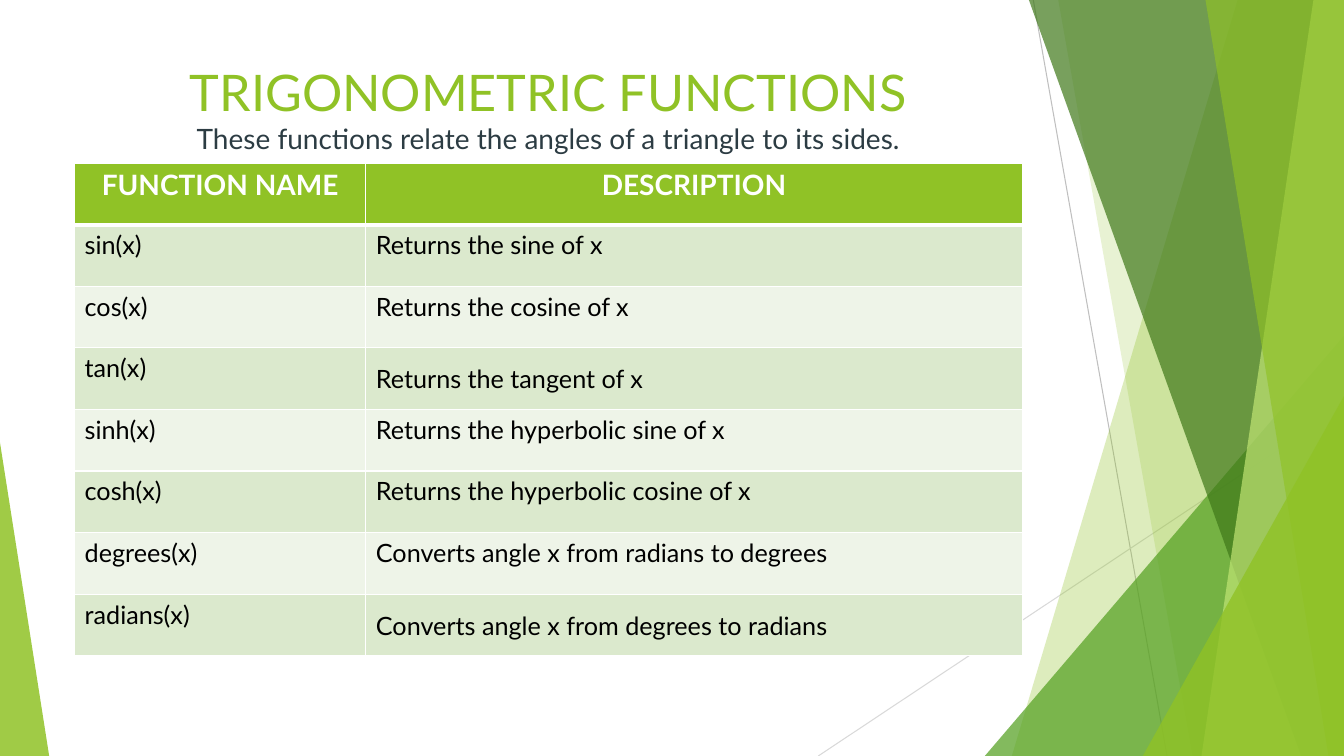
from dataclasses import dataclass

from lxml.etree import SubElement
from pptx import Presentation
from pptx.dml.color import RGBColor
from pptx.enum.shapes import MSO_CONNECTOR, MSO_SHAPE
from pptx.enum.text import MSO_ANCHOR, PP_ALIGN
from pptx.oxml.ns import qn
from pptx.util import Cm, Pt

WIDTH, HEIGHT = 33.87, 19.05


@dataclass(frozen=True)
class Theme:
    font: str = "Lato"
    lime: str = "90C226"
    pale_lime: str = "C0E474"
    green: str = "54A021"
    forest: str = "3F7819"
    slate: str = "2C3C43"
    white: str = "FFFFFF"
    black: str = "000000"
    bands: tuple = ("DBE9CD", "EEF4E8")
    grey: str = "BFBFBF"
    light_grey: str = "D9D9D9"
    title: int = 36
    subtitle: int = 20
    header: int = 20
    body: int = 18


class SlideBuilder:
    def __init__(self, slide, theme):
        self.s, self.theme = slide, theme

    def style_font(self, font, size, color, bold=False):
        font.name, font.size, font.bold = self.theme.font, Pt(size), bold
        font.color.rgb = RGBColor.from_string(color)

    def line(self, x1, y1, x2, y2, color):
        cn = self.s.shapes.add_connector(
            MSO_CONNECTOR.STRAIGHT, Cm(x1), Cm(y1), Cm(x2), Cm(y2))
        cn.line.color.rgb = RGBColor.from_string(color)
        cn.line.width = Pt(0.75)
        SubElement(cn._element.spPr, qn("a:effectLst"))

    def paint(self, sp, color, opacity):
        """Fill without outline or shadow; opacity is in percent."""
        sp.shadow.inherit = False
        sp.line.fill.background()
        sp.fill.solid()
        sp.fill.fore_color.rgb = RGBColor.from_string(color)
        clr = sp._element.spPr.find(qn("a:solidFill"))[0]
        SubElement(clr, qn("a:alpha"), val=str(opacity * 1000))

    def facet(self, top_x, bottom_x, color, opacity):
        """Full-height panel with a slanted left edge, flush with the slide's right side."""
        fb = self.s.shapes.build_freeform(Cm(top_x), 0)
        fb.add_line_segments([(Cm(WIDTH), 0), (Cm(WIDTH), Cm(HEIGHT)),
                              (Cm(bottom_x), Cm(HEIGHT))])
        self.paint(fb.convert_to_shape(), color, opacity)

    def corner(self, x, width, height, apex, color, opacity):
        """Triangle standing on the slide's bottom edge; apex 0 is left, 1 right."""
        sp = self.s.shapes.add_shape(
            MSO_SHAPE.ISOSCELES_TRIANGLE, Cm(x), Cm(HEIGHT - height), Cm(width), Cm(height))
        sp.adjustments[0] = apex
        self.paint(sp, color, opacity)

    def heading(self, x, y, width, height, title, subtitle):
        tf = self.s.shapes.add_textbox(Cm(x), Cm(y), Cm(width), Cm(height)).text_frame
        tf.word_wrap = True
        p = tf.paragraphs[0]
        p.alignment = PP_ALIGN.CENTER
        r = p.add_run()
        r.text = title
        self.style_font(r.font, self.theme.title, self.theme.lime)
        p.add_line_break()
        r = p.add_run()
        r.text = subtitle
        self.style_font(r.font, self.theme.subtitle, self.theme.slate)

    def borders(self, cell, **widths):
        """Draw white cell borders; widths are points keyed L, R, T, B."""
        for side, width in widths.items():
            ln = SubElement(cell._tc.get_or_add_tcPr(), qn(f"a:ln{side}"), w=str(Pt(width)))
            SubElement(SubElement(ln, qn("a:solidFill")), qn("a:srgbClr"), val=self.theme.white)

    def table(self, x, y, col_widths, height, rows, centred_rows):
        """The first row is the header; centred_rows centre their last cell vertically."""
        th = self.theme
        tbl = self.s.shapes.add_table(len(rows), len(col_widths), Cm(x), Cm(y),
                                      Cm(sum(col_widths)), Cm(height)).table
        for col, width in zip(tbl.columns, col_widths):
            col.width = Cm(width)
        for i, texts in enumerate(rows):
            tbl.rows[i].height = Cm(height / len(rows))
            for j, text in enumerate(texts):
                cell = tbl.cell(i, j)
                self.borders(cell, L=1, R=1, T=3 if i == 1 else 1, B=3 if i == 0 else 1)
                cell.fill.solid()
                fill = th.bands[(i - 1) % 2] if i else th.lime
                cell.fill.fore_color.rgb = RGBColor.from_string(fill)
                cell.text = text
                p = cell.text_frame.paragraphs[0]
                if i == 0:
                    p.alignment = PP_ALIGN.CENTER
                    self.style_font(p.font, th.header, th.white, bold=True)
                else:
                    self.style_font(p.font, th.body, th.black)
                if i in centred_rows and j == len(texts) - 1:
                    cell.vertical_anchor = MSO_ANCHOR.MIDDLE
                    cell.margin_top, cell.margin_right = Cm(0.25), Cm(0.2)
                    cell.margin_bottom = Cm(0.23)


FUNCTIONS = [
    ("FUNCTION NAME", "DESCRIPTION"),
    ("sin(x)", "Returns the sine of x"),
    ("cos(x)", "Returns the cosine of x"),
    ("tan(x)", "Returns the tangent of x"),
    ("sinh(x)", "Returns the hyperbolic sine of x"),
    ("cosh(x)", "Returns the hyperbolic cosine of x"),
    ("degrees(x)", "Converts angle x from radians to degrees"),
    ("radians(x)", "Converts angle x from degrees to radians"),
]


def main():
    prs = Presentation()
    prs.slide_width, prs.slide_height = Cm(WIDTH), Cm(HEIGHT)
    th = Theme()
    b = SlideBuilder(prs.slides.add_slide(prs.slide_layouts[6]), th)

    b.line(26.04, 0, 29.41, HEIGHT, th.grey)
    b.line(WIDTH, 10.24, 20.62, HEIGHT, th.light_grey)
    b.facet(31.19, 25.5, th.lime, 30)
    b.facet(26.67, 30.05, th.lime, 20)
    b.corner(24.82, 9.05, 10.59, 1, th.green, 72)
    b.facet(25.93, 32.79, th.forest, 70)
    b.facet(33.1, 30.28, th.pale_lime, 70)
    b.facet(30.38, 33.48, th.lime, 65)
    b.corner(28.8, 5.07, 9.07, 1, th.lime, 80)
    b.corner(0, 1.24, 7.9, 0, th.lime, 85)

    b.heading(1.88, 1.42, 23.88, 2.69, "TRIGONOMETRIC FUNCTIONS",
              "These functions relate the angles of a triangle to its sides.")
    b.table(1.88, 4.11, (7.34, 16.54), 12.42, FUNCTIONS, centred_rows=(3, 7))
    prs.save("out.pptx")


if __name__ == "__main__":
    main()
